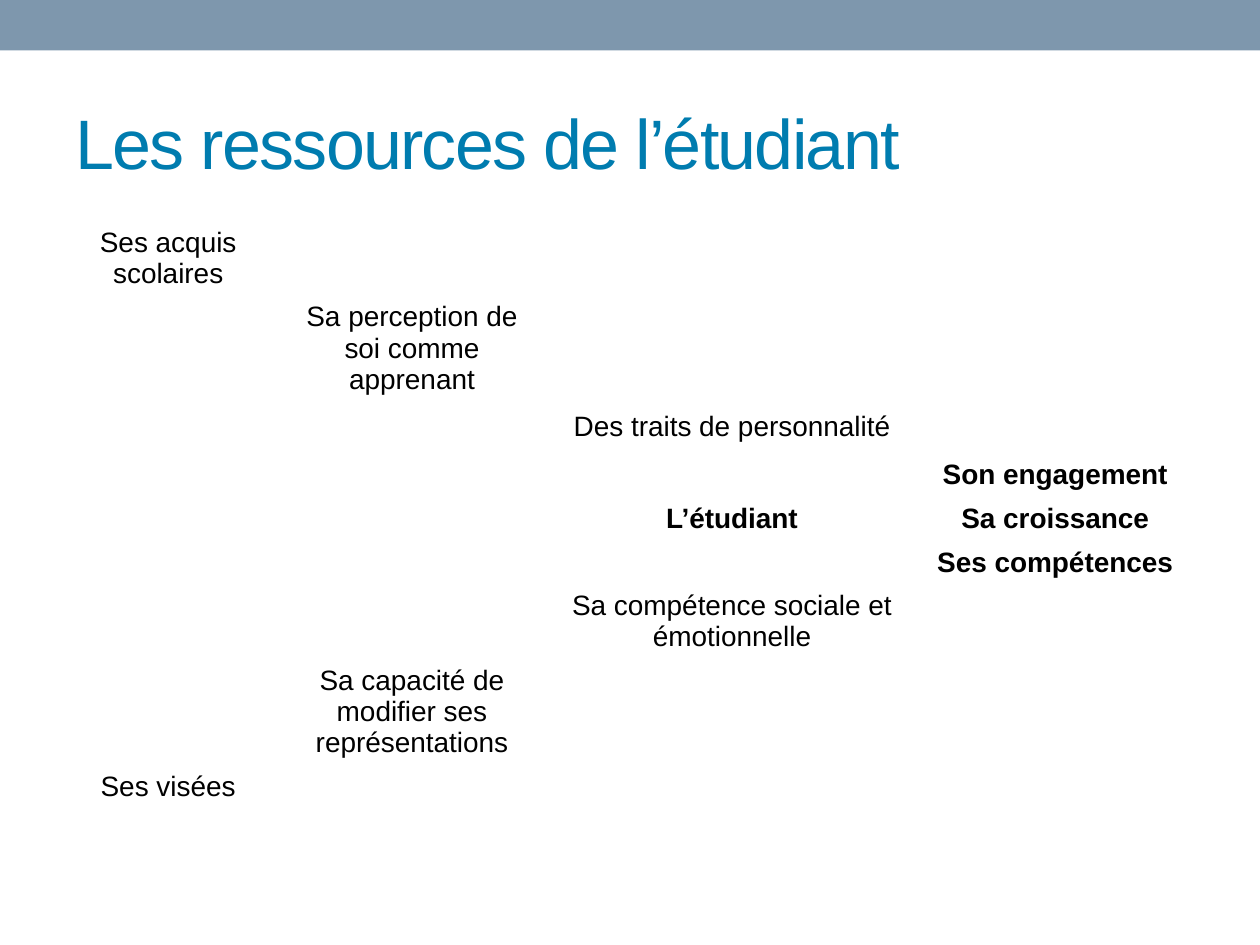
from pptx import Presentation
from pptx.dml.color import RGBColor
from pptx.enum.shapes import MSO_SHAPE
from pptx.enum.text import MSO_ANCHOR, PP_ALIGN
from pptx.util import Inches, Pt

SLATE = RGBColor(0x7E, 0x97, 0xAD)
BLUE = RGBColor(0x00, 0x7C, 0xAF)
BLACK = RGBColor(0x00, 0x00, 0x00)

TITLE = "Les ressources de l’étudiant"
RESOURCES = [
    ["Ses acquis scolaires", "", "", ""],
    ["", "Sa perception de soi comme apprenant", "", ""],
    ["", "", "Des traits de personnalité", ""],
    ["", "", "L’étudiant", "Son engagement"],
    ["", "", "", "Sa croissance"],
    ["", "", "", "Ses compétences"],
    ["", "", "Sa compétence sociale et émotionnelle", ""],
    ["", "Sa capacité de modifier ses représentations", "", ""],
    ["Ses visées", "", "", ""],
]
CORE_ROWS = range(3, 6)
LAST_ROW = len(RESOURCES) - 1
COLUMN_WIDTHS = [1.67, 2.2, 2.88, 2.25]
ROW_HEIGHTS = [0.41] * 3 + [0.14, 0.26, 0.14] + [0.41] * 3
MARGIN = 0.5


def write(frame, text, size, color=BLACK, bold=False, align=PP_ALIGN.CENTER, spacing=0):
    """Put one formatted run in the frame; spacing is in points between letters."""
    paragraph = frame.paragraphs[0]
    paragraph.alignment = align
    run = paragraph.add_run()
    run.text = text
    font = run.font
    font.name, font.size, font.bold = "Arial", Pt(size), bold
    font.color.rgb = color
    if spacing:
        font._element.set("spc", str(round(spacing * 100)))


def add_band(slide, width):
    band = slide.shapes.add_shape(MSO_SHAPE.RECTANGLE, 0, 0, width, Inches(0.4))
    band.shadow.inherit = False
    band.fill.solid()
    band.fill.fore_color.rgb = SLATE
    band.line.fill.background()


def add_title(slide, width):
    title = slide.shapes.title
    title.left, title.top = Inches(MARGIN), Inches(0.58)
    title.width, title.height = width, Inches(1.08)
    title.text_frame.vertical_anchor = MSO_ANCHOR.MIDDLE
    write(title.text_frame, TITLE, 40, BLUE, align=PP_ALIGN.LEFT, spacing=-1)


def add_resources(slide, width):
    holder = slide.shapes.add_table(
        len(RESOURCES), len(COLUMN_WIDTHS),
        Inches(MARGIN), Inches(1.75), width, Inches(sum(ROW_HEIGHTS)))
    table = holder.table
    table.first_row = table.horz_banding = False
    for column, size in zip(table.columns, COLUMN_WIDTHS):
        column.width = Inches(size)
    for row, size in zip(table.rows, ROW_HEIGHTS):
        row.height = Inches(size)

    for r, texts in enumerate(RESOURCES):
        for c, text in enumerate(texts):
            cell = table.cell(r, c)
            cell.fill.background()
            cell.vertical_anchor = MSO_ANCHOR.TOP if r == LAST_ROW else MSO_ANCHOR.MIDDLE
            write(cell.text_frame, text, 16, bold=r in CORE_ROWS)
    for c in range(3):
        table.cell(CORE_ROWS[0], c).merge(table.cell(CORE_ROWS[-1], c))


def main():
    deck = Presentation()
    deck.slide_width, deck.slide_height = Inches(10), Inches(7.5)
    slide = deck.slides.add_slide(deck.slide_layouts[5])
    content_width = deck.slide_width - 2 * Inches(MARGIN)
    add_band(slide, deck.slide_width)
    add_title(slide, content_width)
    add_resources(slide, content_width)
    deck.save("out.pptx")


if __name__ == "__main__":
    main()
